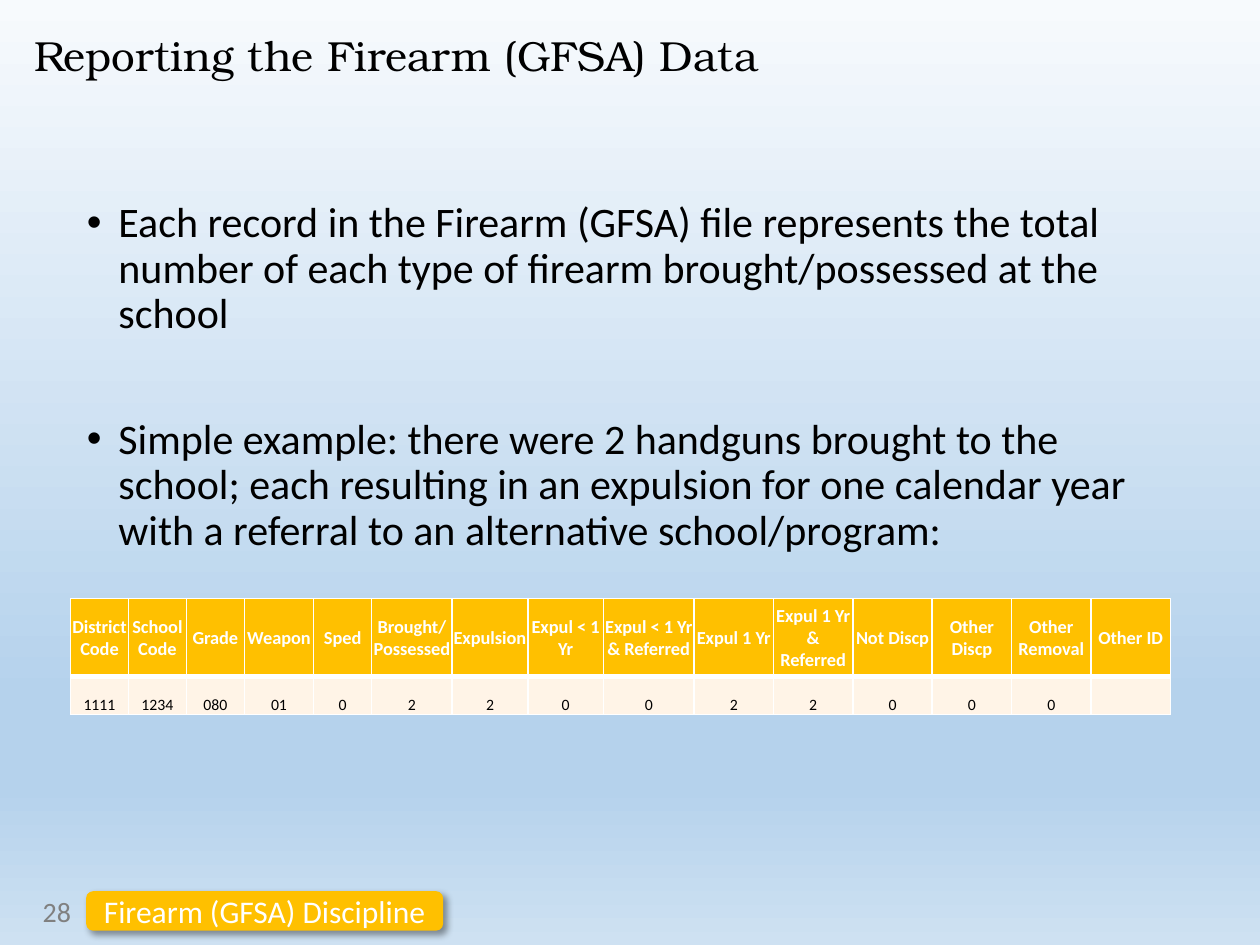
from lxml.etree import SubElement as Sub
from pptx import Presentation
from pptx.dml.color import RGBColor as RGB
from pptx.enum.shapes import MSO_SHAPE
from pptx.enum.text import MSO_ANCHOR as ANCHOR, PP_ALIGN as ALIGN
from pptx.oxml import parse_xml
from pptx.oxml.ns import nsdecls, qn
from pptx.util import Inches, Pt

COLORS = {"black": "000000", "white": "FFFFFF", "gray": "808080",
          "gold": "FFC000", "cream": "FFF4E7"}
SKY = [(0, "F7FAFD"), (74, "B5D2EC"), (83, "B5D2EC"), (100, "CEE1F2")]

prs = Presentation()
prs.slide_width, prs.slide_height = Inches(10), Inches(7.5)
s = prs.slides.add_slide(prs.slide_layouts[6])
UNIT = prs.slide_width / 100  # the slide is a grid of 100 columns by 75 rows


def grid(*lengths):
    return [round(n * UNIT) for n in lengths]


def style(p, size, color, font="Calibri", bold=False):
    p.font.size, p.font.name, p.font.bold = Pt(size), font, bold
    p.font.color.rgb = RGB.from_string(COLORS[color])
    for r in p.runs:
        r.font.size, r.font.name, r.font.bold = Pt(size), font, bold
        r.font.color.rgb = RGB.from_string(COLORS[color])


# Background gradient, running from top to bottom
fill = s.background.fill
fill.gradient()
fill.gradient_angle = 270
stops = next(s.element.iter(qn("a:gsLst")))
for stop in list(stops):
    stops.remove(stop)
for pos, color in SKY:
    stop = Sub(stops, qn("a:gs"), pos=str(pos * 1000))
    Sub(stop, qn("a:srgbClr"), val=color)

# Title
tf = s.shapes.add_textbox(*grid(2.7, 2.8, 66.5, 8.3)).text_frame
tf.word_wrap = True
tf.margin_left = tf.margin_top = tf.margin_right = tf.margin_bottom = 0
tf.text = "Reporting the Firearm (GFSA) Data"
tf.paragraphs[0].line_spacing = 0.9
style(tf.paragraphs[0], 24, "black", "TeX Gyre Bonum")

# Bullets
bullets = [
    "Each record in the Firearm (GFSA) file represents the total number of each "
    "type of firearm brought/possessed at the school",
    "Simple example: there were 2 handguns brought to the school; each resulting "
    "in an expulsion for one calendar year with a referral to an alternative "
    "school/program:",
]
tf = s.shapes.add_textbox(*grid(6.9, 16, 86.2, 50.8)).text_frame
tf.word_wrap = True
tf.margin_left = tf.margin_top = tf.margin_right = 0
tf.text = "\n".join(bullets)
for i, p in enumerate(tf.paragraphs):
    p.line_spacing = 0.9
    p.space_before = Pt(46 * i)
    pPr = p._p.get_or_add_pPr()
    pPr.set("marL", str(Inches(0.25)))
    pPr.set("indent", str(-Inches(0.25)))
    Sub(pPr, qn("a:buFont"), typeface="Arial")
    Sub(pPr, qn("a:buChar"), char="•")
    style(p, 24, "black")

# Example record table
header = ["District Code", "School Code", "Grade", "Weapon", "Sped",
          "Brought/ Possessed", "Expulsion", "Expul < 1 Yr",
          "Expul < 1 Yr & Referred", "Expul 1 Yr ", "Expul 1 Yr & Referred",
          "Not Discp", "Other Discp", "Other Removal", "Other ID"]
record = ["1111", "1234", "080", "01", "0", "2", "2", "0", "0", "2", "2",
          "0", "0", "0", ""]
widths = [4.6] * 3 + [5.5, 4.6, 6.4, 6, 6, 7.2] + [6.3] * 6
# text, fill, size, text colour, bold, anchor, bottom border
rows = [(header, "gold", 10.5, "white", True, ANCHOR.MIDDLE, 3),
        (record, "cream", 9, "black", False, ANCHOR.BOTTOM, 1)]

table = s.shapes.add_table(2, len(header), *grid(5.6, 47.5, 87.5, 9.2)).table
for column, width in zip(table.columns, grid(*widths)):
    column.width = width
for row, height in zip(table.rows, grid(6.2, 3)):
    row.height = height

for row, (texts, back, size, color, bold, anchor, bottom) in zip(table.rows, rows):
    for cell, text in zip(row.cells, texts):
        cell.margin_left = cell.margin_top = cell.margin_right = Inches(0.01)
        cell.margin_bottom = 0
        cell.vertical_anchor = anchor
        cell.text = text
        p = cell.text_frame.paragraphs[0]
        p.alignment = ALIGN.CENTER
        style(p, size, color, bold=bold)
        tcPr = cell._tc.get_or_add_tcPr()
        for side, weight in zip("LRTB", (1, 1, 1, bottom)):
            ln = Sub(tcPr, qn(f"a:ln{side}"), w=str(Pt(weight)))
            Sub(Sub(ln, qn("a:solidFill")), qn("a:srgbClr"), val=COLORS["white"])
        cell.fill.solid()
        cell.fill.fore_color.rgb = RGB.from_string(COLORS[back])

# Slide number
tf = s.shapes.add_textbox(*grid(2.4, 70.3, 22.5, 4)).text_frame
tf.word_wrap = True
tf.vertical_anchor = ANCHOR.MIDDLE
tf.text = "28"
style(tf.paragraphs[0], 16, "gray")

# Section badge with a soft shadow
badge = s.shapes.add_shape(MSO_SHAPE.ROUNDED_RECTANGLE, *grid(6.9, 70.8, 28.2, 3))
badge.fill.solid()
badge.fill.fore_color.rgb = badge.line.color.rgb = RGB.from_string(COLORS["gold"])
badge.line.width = Pt(1)
badge.shadow.inherit = False
effects = badge._element.spPr.find(qn("a:effectLst"))
effects.append(parse_xml(
    f'<a:outerShdw {nsdecls("a")} blurRad="{Pt(4)}" dist="{Pt(3)}" dir="2700000" '
    f'algn="tl" rotWithShape="0"><a:srgbClr val="{COLORS["black"]}">'
    '<a:alpha val="40000"/></a:srgbClr></a:outerShdw>'))
tf = badge.text_frame
tf.word_wrap = True
tf.vertical_anchor = ANCHOR.MIDDLE
tf.text = "Firearm (GFSA) Discipline"
tf.paragraphs[0].alignment = ALIGN.CENTER
style(tf.paragraphs[0], 18, "white")

prs.save("out.pptx")
